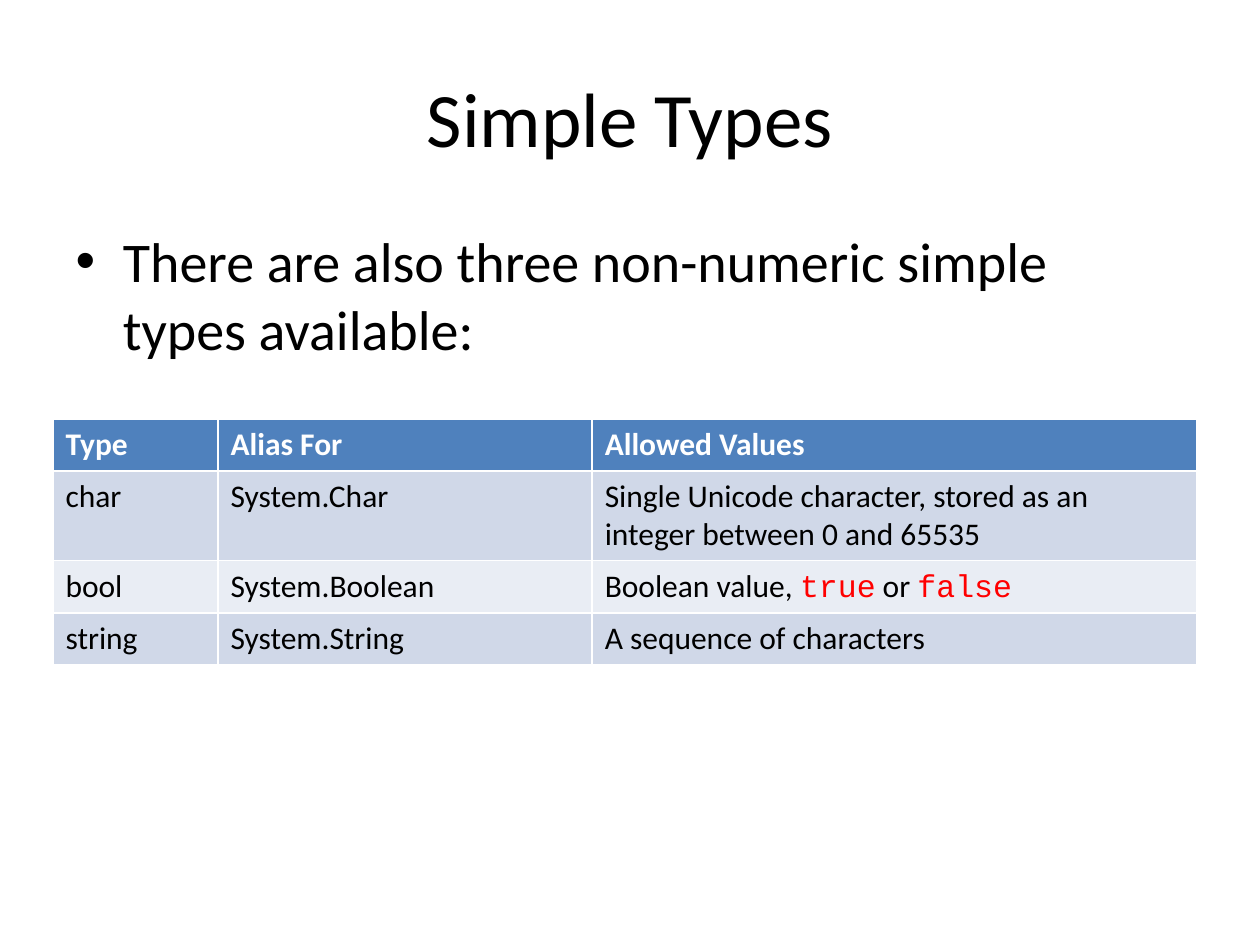
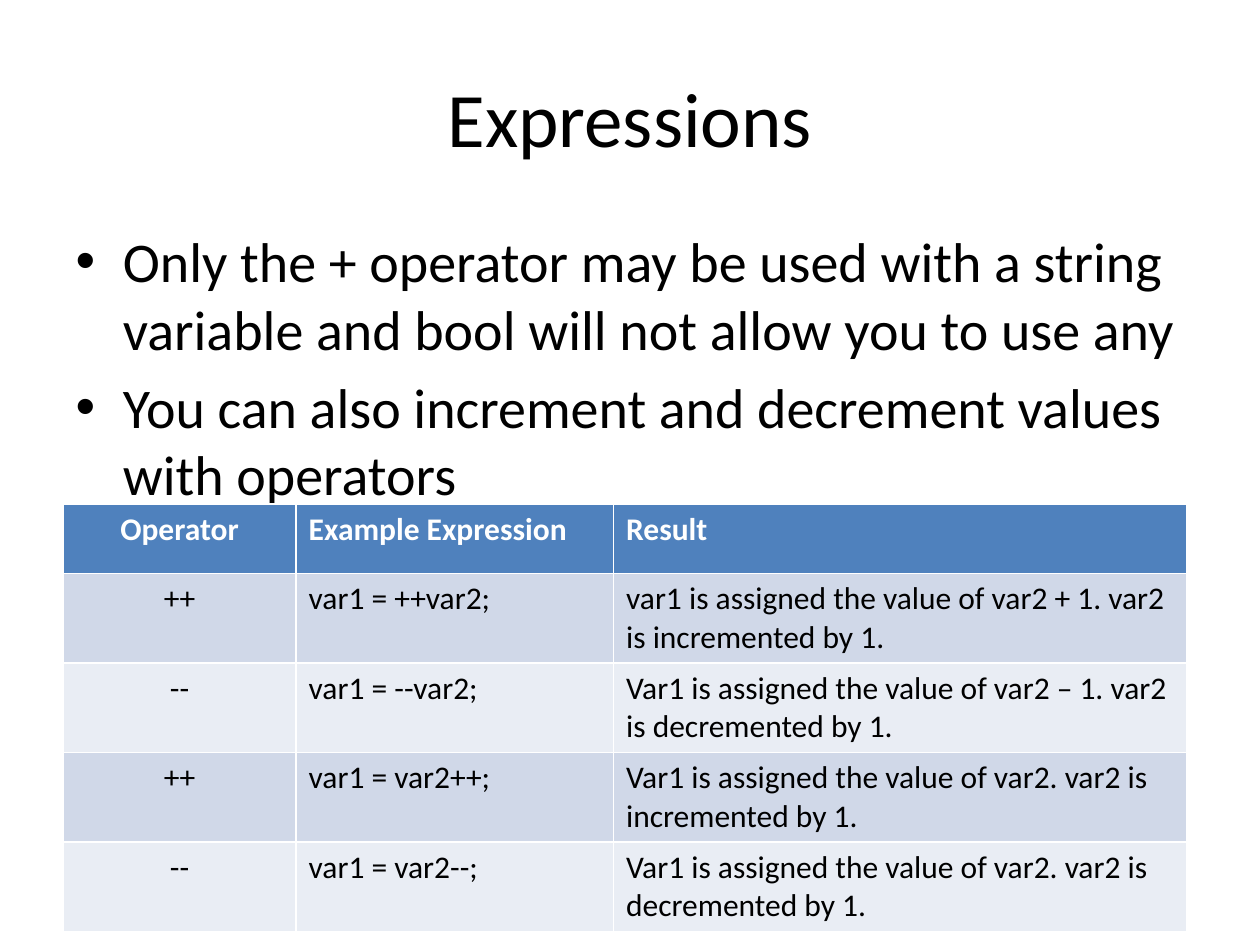
import pptx
import pptx.dml.color
import pptx.enum.text
import pptx.util

RGBColor = pptx.dml.color.RGBColor
PP_ALIGN = pptx.enum.text.PP_ALIGN
MSO_ANCHOR = pptx.enum.text.MSO_ANCHOR

BLACK = RGBColor(0x00, 0x00, 0x00)
WHITE = RGBColor(0xFF, 0xFF, 0xFF)
RED = RGBColor(0xFF, 0x00, 0x00)
HEADER_BLUE = RGBColor(0x4F, 0x81, 0xBD)
BAND_DARK = RGBColor(0xD0, 0xD8, 0xE8)
BAND_LIGHT = RGBColor(0xE9, 0xED, 0xF4)

TEXT_FONT = "Calibri"
CODE_FONT = "Courier New"
EMU_PER_PX = 9144  # 100 px to the inch

SIMPLE_TYPES = [
    ["Type", "Alias For", "Allowed Values"],
    ["char", "System.Char",
     "Single Unicode character, stored as an integer between 0 and 65535"],
    ["bool", "System.Boolean", "Boolean value, `true` or `false`"],
    ["string", "System.String", "A sequence of characters"],
]
INCREMENT_OPERATORS = [
    ["Operator", "Example Expression", "Result"],
    ["++", "var1 = ++var2;",
     "var1 is assigned the value of var2 + 1. var2 is incremented by 1."],
    ["--", "var1 = --var2;",
     "Var1 is assigned the value of var2 – 1. var2 is decremented by 1."],
    ["++", "var1 = var2++;",
     "Var1 is assigned the value of var2. var2 is incremented by 1."],
    ["--", "var1 = var2--;",
     "Var1 is assigned the value of var2. var2 is decremented by 1."],
]


def px(length):
    return pptx.util.Emu(length * EMU_PER_PX)


class Deck:
    def __init__(self):
        self.presentation = pptx.Presentation()
        self.presentation.slide_width = px(1000)
        self.presentation.slide_height = px(750)
        self.slide = None

    def new_slide(self):
        title_and_content = self.presentation.slide_layouts[1]
        self.slide = self.presentation.slides.add_slide(title_and_content)

    def place(self, placeholder, left, top, width, height):
        placeholder.left, placeholder.top = px(left), px(top)
        placeholder.width, placeholder.height = px(width), px(height)

    def style(self, paragraph, size, color=BLACK, bold=False):
        for run in paragraph.runs:
            run.font.name = TEXT_FONT
            run.font.size = pptx.util.Pt(size)
            run.font.color.rgb = color
            run.font.bold = bold

    def title(self, text):
        heading = self.slide.shapes.title
        self.place(heading, 50, 30, 900, 125)
        heading.text_frame.text = text
        heading.text_frame.vertical_anchor = MSO_ANCHOR.MIDDLE
        paragraph = heading.text_frame.paragraphs[0]
        paragraph.alignment = PP_ALIGN.CENTER
        self.style(paragraph, 44)

    def bullets(self, points):
        body = self.slide.placeholders[1]
        self.place(body, 50, 175, 900, 495)
        body.text_frame.text = "\n".join(points)
        for paragraph in body.text_frame.paragraphs:
            self.style(paragraph, 32)

    def cell(self, cell, text, fill, color, bold, alignment):
        """Fill one table cell; words between backticks are set as code."""
        cell.fill.solid()
        cell.fill.fore_color.rgb = fill
        paragraph = cell.text_frame.paragraphs[0]
        paragraph.alignment = alignment
        pieces = text.split("`")
        for piece in pieces:
            paragraph.add_run().text = piece if piece else ""
        self.style(paragraph, 18, color, bold)
        for code in paragraph.runs[1::2]:
            code.font.name = CODE_FONT
            code.font.color.rgb = RED
        if not pieces[-1]:
            last = paragraph.runs[-1]._r
            last.getparent().remove(last)

    def table(self, rows, left, top, column_widths, row_height, first_column=PP_ALIGN.LEFT):
        table = self.slide.shapes.add_table(
            len(rows), len(column_widths), px(left), px(top),
            px(sum(column_widths)), px(row_height * len(rows))).table
        for column, width in zip(table.columns, column_widths):
            column.width = px(width)
        for r, texts in enumerate(rows):
            is_header = r == 0
            band = BAND_DARK if r % 2 else BAND_LIGHT
            for c, text in enumerate(texts):
                self.cell(table.cell(r, c), text,
                          fill=HEADER_BLUE if is_header else band,
                          color=WHITE if is_header else BLACK,
                          bold=is_header,
                          alignment=first_column if c == 0 else PP_ALIGN.LEFT)


def main():
    deck = Deck()

    deck.new_slide()
    deck.title("Simple Types")
    deck.bullets(["There are also three non-numeric simple types available:"])
    deck.table(SIMPLE_TYPES, 42, 333, [131, 297, 480], 41)

    deck.new_slide()
    deck.title("Expressions")
    deck.bullets([
        "Only the + operator may be used with a string variable "
        "and bool will not allow you to use any",
        "You can also increment and decrement values with operators",
    ])
    deck.table(INCREMENT_OPERATORS, 50, 400, [185, 252, 455], 55,
               first_column=PP_ALIGN.CENTER)

    deck.presentation.save("out.pptx")


if __name__ == "__main__":
    main()
